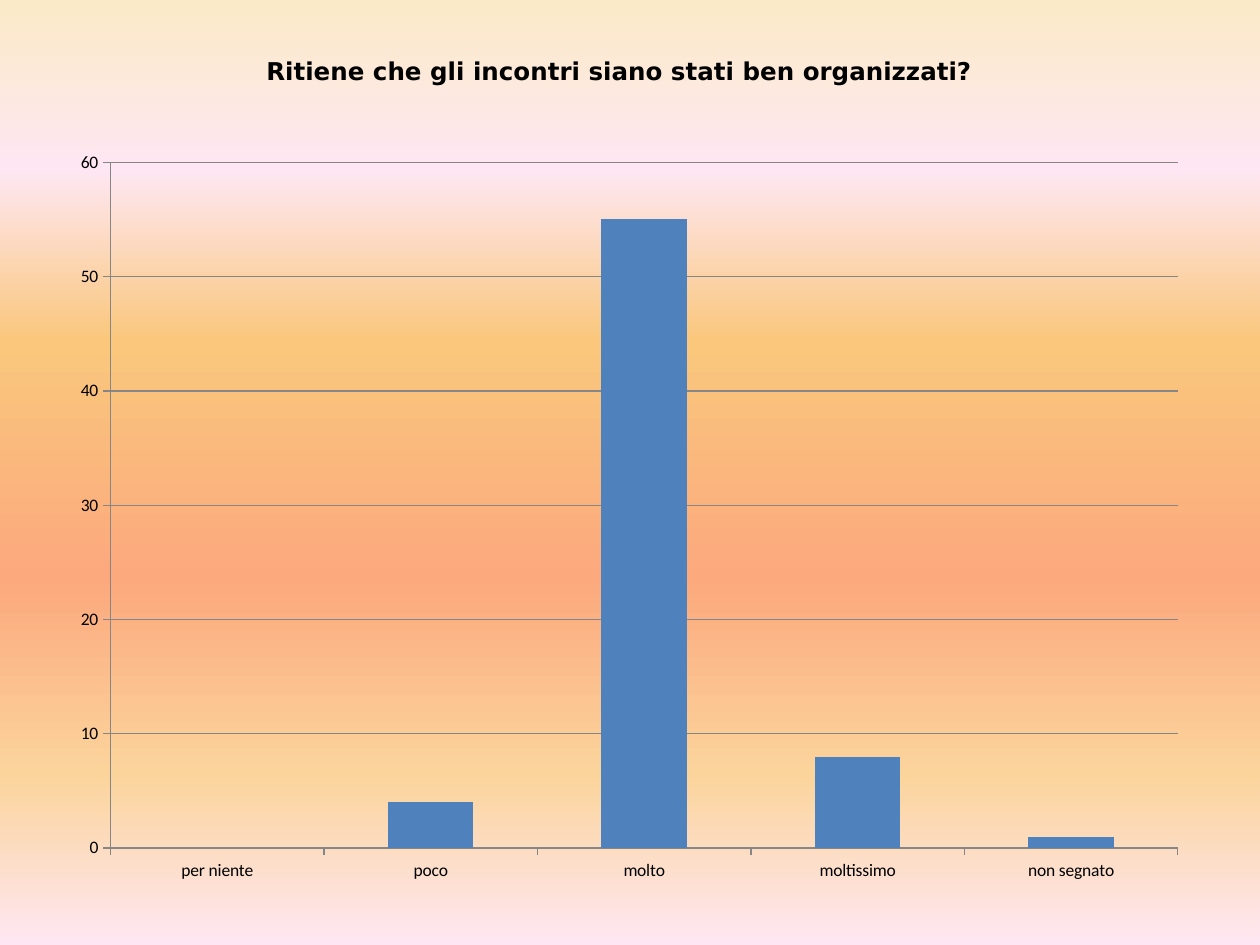
from lxml.etree import SubElement
from pptx import Presentation
from pptx.chart.data import CategoryChartData
from pptx.dml.color import RGBColor
from pptx.enum.chart import XL_CHART_TYPE as ChartType, XL_TICK_MARK as Tick
from pptx.enum.text import MSO_ANCHOR as Anchor, PP_ALIGN as Align
from pptx.oxml.ns import qn
from pptx.util import Inches, Pt

TITLE = "Ritiene che gli incontri siano stati ben organizzati?"
ANSWERS = [
    ("per niente", None),
    ("poco", 4),
    ("molto", 55),
    ("moltissimo", 8),
    ("non segnato", 1),
]
BLACK = RGBColor(0x00, 0x00, 0x00)
BLUE = RGBColor(0x4F, 0x81, 0xBD)
GRAY = RGBColor(0x86, 0x86, 0x86)
PINK = RGBColor(0xFE, 0xE7, 0xF2)
GRADIENT = [
    (0, RGBColor(0xFB, 0xEA, 0xC7)),
    (18, PINK),
    (36, RGBColor(0xFA, 0xC7, 0x7D)),
    (61, RGBColor(0xFB, 0xA9, 0x7D)),
    (82, RGBColor(0xFB, 0xD4, 0x9C)),
    (100, PINK),
]
TITLE_BOX = (0.62, 0.39, 8.59, 0.34)
CHART_BOX = (0.47, 1.09, 9.06, 6.02)
PLOT_SHARES = {"x": 0.045, "y": 0.033, "w": 0.935, "h": 0.904}


def set_background(s):
    fill = s.background.fill
    fill.gradient()
    fill.gradient_angle = 270
    stops = next(s.element.iter(qn("a:gsLst")))
    for stop in list(stops):
        stops.remove(stop)
    for pos, color in GRADIENT:
        stop = SubElement(stops, qn("a:gs"), pos=str(pos * 1000))
        SubElement(stop, qn("a:srgbClr"), val=str(color))


def set_title(s):
    sp = s.shapes.title
    sp.left, sp.top, sp.width, sp.height = map(Inches, TITLE_BOX)
    tf = sp.text_frame
    tf.text = TITLE
    tf.word_wrap = True
    tf.vertical_anchor = Anchor.MIDDLE
    p = tf.paragraphs[0]
    p.alignment = Align.CENTER
    p.font.name = "DejaVu Sans"
    p.font.size = Pt(14)
    p.font.bold = True
    p.font.color.rgb = BLACK


def set_plot_layout(chart):
    area = chart._chartSpace.chart.plotArea
    for old in area.findall(qn("c:layout")):
        area.remove(old)
    layout = SubElement(area, qn("c:layout"))
    area.insert(0, layout)
    manual = SubElement(layout, qn("c:manualLayout"))
    SubElement(manual, qn("c:layoutTarget"), val="inner")
    for side in "xy":
        SubElement(manual, qn(f"c:{side}Mode"), val="edge")
    for side, share in PLOT_SHARES.items():
        SubElement(manual, qn(f"c:{side}"), val=str(share))


def add_answers_chart(s):
    data = CategoryChartData()
    data.categories = [name for name, _ in ANSWERS]
    data.add_series("Series 1", [count for _, count in ANSWERS])
    chart = s.shapes.add_chart(
        ChartType.COLUMN_CLUSTERED, *map(Inches, CHART_BOX), data).chart
    chart.has_title = False
    chart.has_legend = False
    chart.font.name = "Calibri"
    chart.font.size = Pt(10)
    chart.font.color.rgb = BLACK
    plot = chart.plots[0]
    plot.vary_by_categories = False
    plot.gap_width = 150
    fill = plot.series[0].format.fill
    fill.solid()
    fill.fore_color.rgb = BLUE

    values = chart.value_axis
    values.minimum_scale, values.maximum_scale, values.major_unit = 0, 60, 10
    values.has_major_gridlines = True
    for axis in (chart.category_axis, values):
        axis.major_tick_mark = Tick.OUTSIDE
        axis.minor_tick_mark = Tick.NONE
    for part in (chart.category_axis, values, values.major_gridlines):
        part.format.line.color.rgb = GRAY
        part.format.line.width = Pt(0.75)
    set_plot_layout(chart)


prs = Presentation()
prs.slide_width, prs.slide_height = Inches(10), Inches(7.5)
s = prs.slides.add_slide(prs.slide_layouts[5])
set_background(s)
set_title(s)
add_answers_chart(s)
prs.save("out.pptx")
